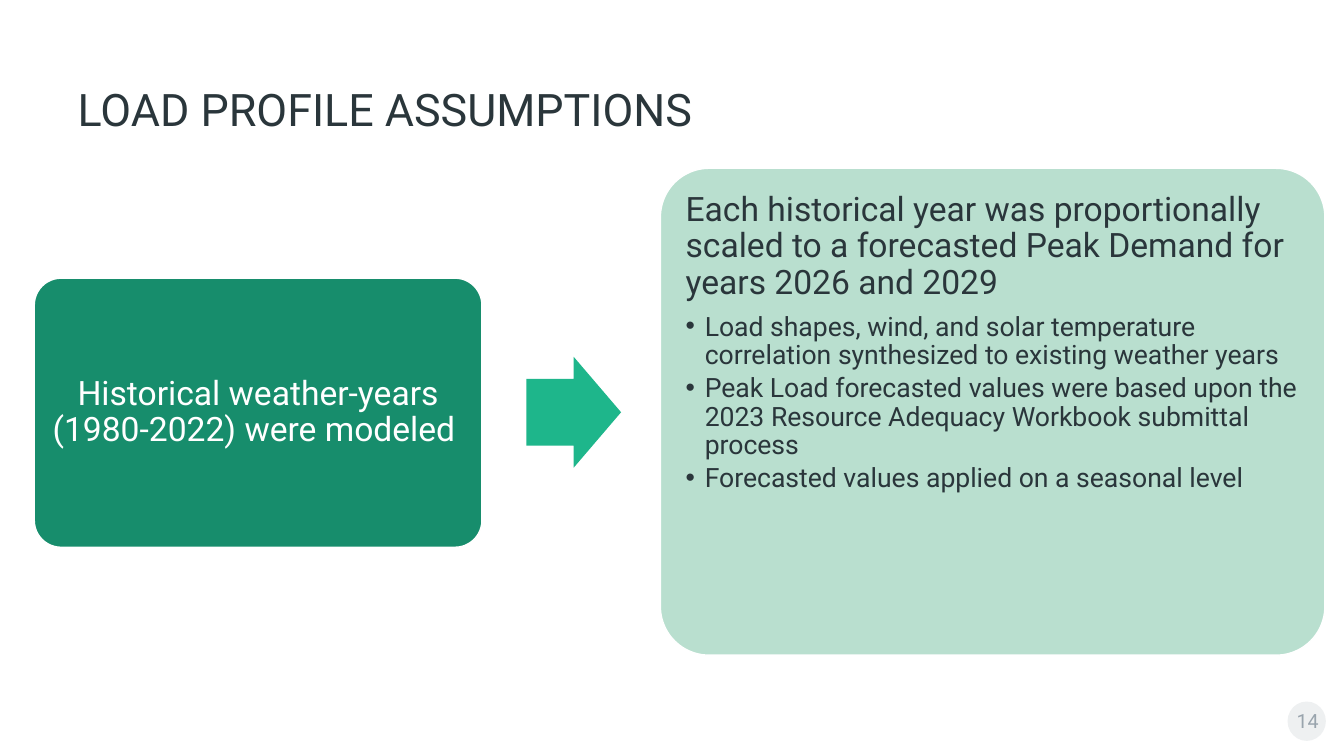
from dataclasses import dataclass

from lxml import etree
from pptx import Presentation
from pptx.dml.color import RGBColor
from pptx.enum.shapes import MSO_SHAPE
from pptx.enum.text import MSO_ANCHOR, MSO_AUTO_SIZE, PP_ALIGN
from pptx.oxml.ns import qn
from pptx.util import Inches, Pt

ROUNDED, ARROW, OVAL = MSO_SHAPE.ROUNDED_RECTANGLE, MSO_SHAPE.RIGHT_ARROW, MSO_SHAPE.OVAL
TOP, MIDDLE, BOTTOM = MSO_ANCHOR.TOP, MSO_ANCHOR.MIDDLE, MSO_ANCHOR.BOTTOM
LEFT, CENTER = PP_ALIGN.LEFT, PP_ALIGN.CENTER
NO_AUTOFIT = MSO_AUTO_SIZE.NONE


@dataclass(frozen=True)
class Theme:
    font: str = "Roboto"
    ink: str = "2A363B"
    white: str = "FFFFFF"
    dark_green: str = "178D6C"
    green: str = "1EB68B"
    pale_green: str = "B9DFCF"
    badge: str = "EEF0F1"
    badge_ink: str = "99A4AD"
    title_size: int = 32
    lead_size: int = 24
    bullet_size: int = 19
    number_size: int = 14


THEME = Theme()

TITLE = "LOAD PROFILE ASSUMPTIONS"
SOURCE_YEARS = "Historical weather-years (1980-2022) were modeled "
SCALING = ("Each historical year was proportionally scaled to a forecasted "
           "Peak Demand for years 2026 and 2029")
DETAILS = (
    "Load shapes, wind, and solar temperature correlation synthesized to existing weather years",
    "Peak Load forecasted values were based upon the 2023 Resource Adequacy Workbook "
    "submittal process",
    "Forecasted values applied on a seasonal level",
)
PAGE_NUMBER = "14"


def apply(target, values):
    """Set each named attribute of the target."""
    for name, value in values.items():
        setattr(target, name, value)


def place(box, left, top, width, height):
    apply(box, {"left": Inches(left), "top": Inches(top),
                "width": Inches(width), "height": Inches(height)})


def format_frame(frame, anchor, side=0.1, edge=0.1):
    apply(frame, {"word_wrap": True, "auto_size": NO_AUTOFIT, "vertical_anchor": anchor,
                  "margin_left": Inches(side), "margin_right": Inches(side),
                  "margin_top": Inches(edge), "margin_bottom": Inches(edge)})


def write(para, text, size, color, align=LEFT, spacing=1.0, after=0):
    """Fill one paragraph; the space after is a share of the type size."""
    apply(para, {"alignment": align, "line_spacing": spacing,
                 "space_before": Pt(0), "space_after": Pt(size * after)})
    span = para.add_run()
    span.text = text
    apply(span.font, {"name": THEME.font, "size": Pt(size)})
    span.font.color.rgb = RGBColor.from_string(color)


def set_bullet(para, char=None, indent=0):
    """Give a paragraph a hanging bullet, or none."""
    props = para._p.get_or_add_pPr()
    props.set("marL", str(Inches(indent)))
    props.set("indent", str(-Inches(indent)))
    if char:
        etree.SubElement(props, qn("a:buChar")).set("char", char)
    else:
        etree.SubElement(props, qn("a:buNone"))


def add_block(page, kind, bounds, fill, adjustments=(), outline=None):
    block = page.shapes.add_shape(kind, *map(Inches, bounds))
    block.shadow.inherit = False
    block.fill.solid()
    block.fill.fore_color.rgb = RGBColor.from_string(fill)
    for index, value in enumerate(adjustments):
        block.adjustments[index] = value
    if outline:
        block.line.color.rgb = RGBColor.from_string(outline)
        block.line.width = Pt(1)
    else:
        block.line.fill.background()
    return block


def add_title(page):
    title = page.shapes.title
    place(title, 0.67, 0.62, 11.97, 1.03)
    format_frame(title.text_frame, MIDDLE, edge=0.05)
    write(title.text_frame.paragraphs[0], TITLE, THEME.title_size, THEME.ink, spacing=0.75)


def add_source_card(page):
    card = add_block(page, ROUNDED, (0.34, 2.76, 4.44, 2.67), THEME.dark_green,
                     (0.1,), THEME.white)
    format_frame(card.text_frame, MIDDLE)
    write(card.text_frame.paragraphs[0], SOURCE_YEARS, THEME.lead_size, THEME.white,
          CENTER, 0.9, 0.35)


def add_scaling_panel(page):
    panel = add_block(page, ROUNDED, (6.55, 1.67, 6.59, 4.83), THEME.pale_green,
                      (0.1,), THEME.white)
    body = page.placeholders[1]
    panel._element.addnext(body._element)  # the list sits in front of its panel
    place(body, 6.7, 1.81, 6.3, 4.55)
    frame = body.text_frame
    format_frame(frame, TOP)
    lead = frame.paragraphs[0]
    set_bullet(lead)
    write(lead, SCALING, THEME.lead_size, THEME.ink, spacing=0.9, after=0.35)
    for detail in DETAILS:
        para = frame.add_paragraph()
        para.level = 1
        set_bullet(para, "•", 0.19)
        write(para, detail, THEME.bullet_size, THEME.ink, spacing=0.9, after=0.15)


def add_page_number(page):
    add_block(page, OVAL, (12.77, 6.96, 0.38, 0.39), THEME.badge)
    box = page.shapes.add_textbox(*map(Inches, (12.77, 6.92, 0.4, 0.4)))
    format_frame(box.text_frame, BOTTOM, side=0.03, edge=0.05)
    write(box.text_frame.paragraphs[0], PAGE_NUMBER, THEME.number_size,
          THEME.badge_ink, CENTER)


def main():
    deck = Presentation()
    deck.slide_width, deck.slide_height = Inches(13.33), Inches(7.5)
    page = deck.slides.add_slide(deck.slide_layouts[1])

    # Page furniture
    add_page_number(page)
    add_title(page)

    # Flow from weather years to scaled forecast
    add_source_card(page)
    add_block(page, ARROW, (5.22, 3.54, 0.94, 1.1), THEME.green, (0.6, 0.5))
    add_scaling_panel(page)

    deck.save("out.pptx")


if __name__ == "__main__":
    main()
